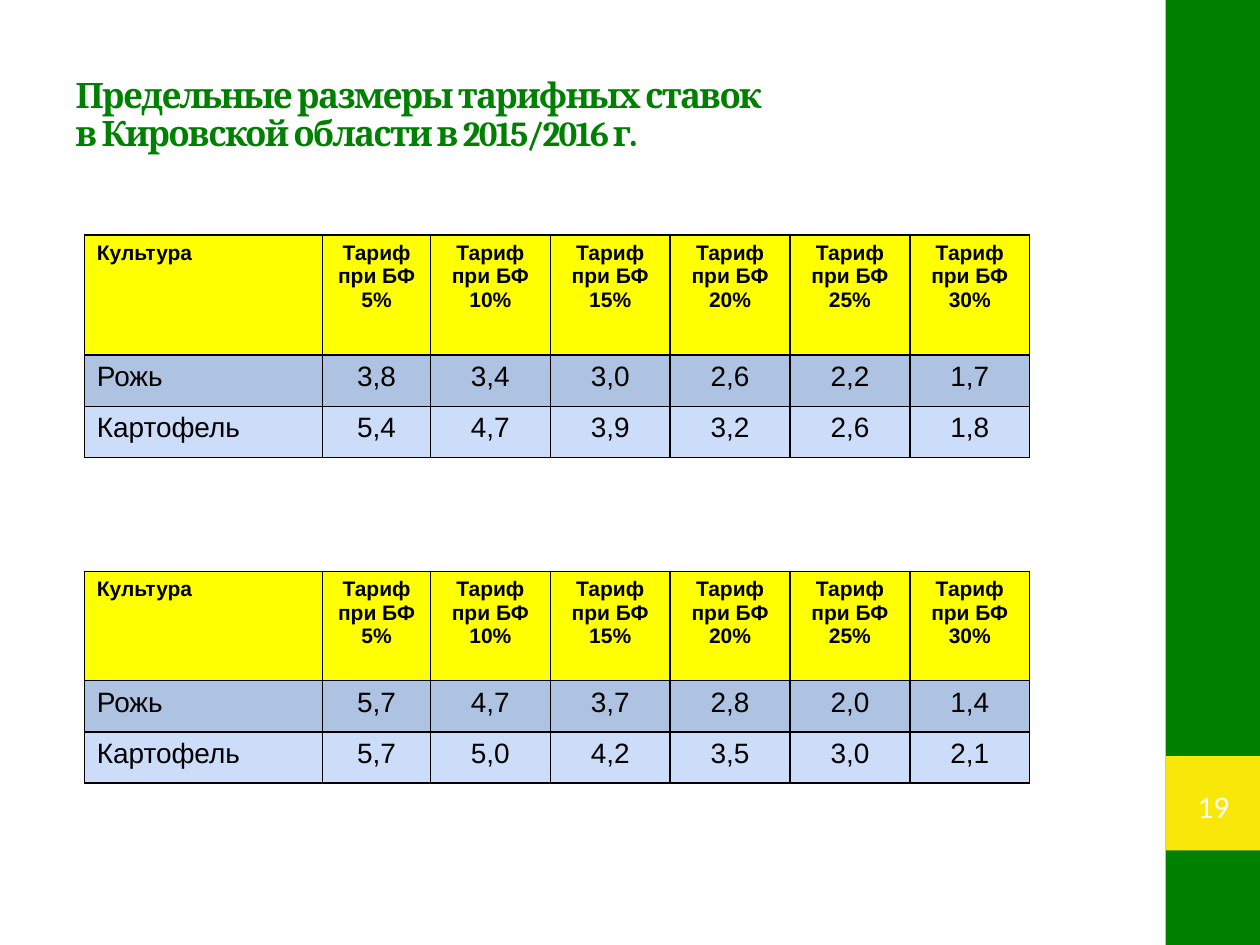
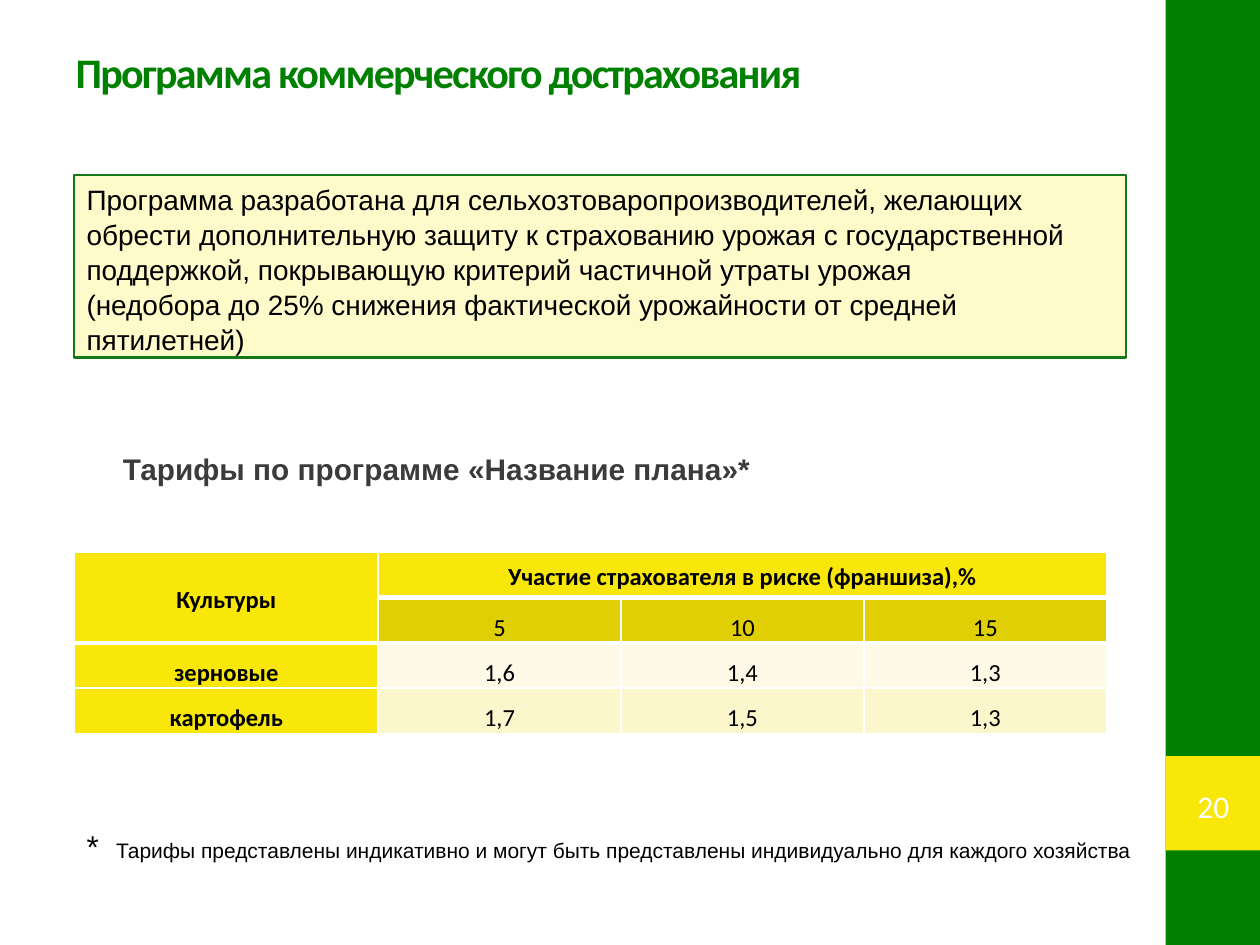
from lxml import etree
from pptx import Presentation
from pptx.dml.color import RGBColor
from pptx.enum import shapes, text
from pptx.oxml import ns
from pptx.util import Pt

COLORS = {
    "green": "008000", "yellow": "F8E708", "white": "FFFFFF", "black": "000000",
    "bright": "FFFF00", "steel": "ADC3E1", "sky": "CCDDF9",
    "gold": "DFCF04", "ivory": "FEFAE7", "cream": "FCF6CC",
    "callout": "FEFAC9", "outline": "177719", "gray": "3B3B3B",
}
CENTER = {"alignment": text.PP_ALIGN.CENTER}
LEFT = {"alignment": text.PP_ALIGN.LEFT}
MIDDLE = text.MSO_ANCHOR.MIDDLE
NO_INSETS = dict.fromkeys(("margin_left", "margin_top", "margin_right", "margin_bottom"), 0)
BAND = (666, 0, 54, 540)
NUMBER_TILE = (666, 432, 54, 54)
TITLE_SIZE = (600, 90)

TARIFF_HEADER = ["Культура"] + [f"Тариф при БФ {share}%" for share in range(5, 31, 5)]
TARIFF_COLUMNS = [136.2, 61.6] + [68.5] * 5
TARIFFS = [
    {"box": (48.2, 134.2), "header_height": 68.8, "rows": [
        ["Рожь", "3,8", "3,4", "3,0", "2,6", "2,2", "1,7"],
        ["Картофель", "5,4", "4,7", "3,9", "3,2", "2,6", "1,8"]]},
    {"box": (48.2, 326.6), "header_height": 62.4, "rows": [
        ["Рожь", "5,7", "4,7", "3,7", "2,8", "2,0", "1,4"],
        ["Картофель", "5,7", "5,0", "4,2", "3,5", "3,0", "2,1"]]},
]
FRANCHISE = [
    ["Культуры", "Участие страхователя в риске (франшиза),%", "", ""],
    ["", "5", "10", "15"],
    ["зерновые", "1,6", "1,4", "1,3"],
    ["картофель", "1,7", "1,5", "1,3"],
]
FRANCHISE_FILLS = ["yellow", "gold", "ivory", "cream"]


def rgb(name):
    """Return the named palette colour."""
    return RGBColor.from_string(COLORS[name])


def assign(target, values):
    """Set each attribute of the target from a dict."""
    for name, value in values.items():
        setattr(target, name, value)


def place(shape, box):
    """Move a shape to a box given in points."""
    assign(shape, dict(zip(("left", "top", "width", "height"), map(Pt, box))))


def add_run(paragraph, content, name, size, color="black", bold=False):
    """Append a formatted run to a paragraph."""
    run = paragraph.add_run()
    run.text = content
    assign(run.font, {"name": name, "size": Pt(size), "bold": bold})
    run.font.color.rgb = rgb(color)


def write(frame, lines, paragraph_format, **font):
    """Fill a text frame with one paragraph per line."""
    for index, line in enumerate(lines):
        paragraph = frame.add_paragraph() if index else frame.paragraphs[0]
        assign(paragraph, paragraph_format)
        add_run(paragraph, line, **font)


def indent(paragraph, margin, first=0):
    """Set the left margin and first-line indent without a bullet."""
    properties = paragraph._p.get_or_add_pPr()
    properties.set("marL", str(Pt(margin)))
    properties.set("indent", str(Pt(first)))
    etree.SubElement(properties, ns.qn("a:buNone"))


def add_panel(slide, box, fill=None, line=None, kind=shapes.MSO_SHAPE.RECTANGLE):
    """Add a flat preset shape."""
    shape = slide.shapes.add_shape(kind, *map(Pt, box))
    shape.shadow.inherit = False
    if fill:
        shape.fill.solid()
        shape.fill.fore_color.rgb = rgb(fill)
    else:
        shape.fill.background()
    if line:
        shape.line.color.rgb = rgb(line)
        shape.line.width = Pt(1.5)
    else:
        shape.line.fill.background()
    return shape


def add_master_band(presentation, slide):
    """Put the side band and number tile on the slide master."""
    tree = presentation.slide_master.element.cSld.spTree
    for position, (box, fill) in enumerate([(BAND, "green"), (NUMBER_TILE, "yellow")], 2):
        tree.insert(position, add_panel(slide, box, fill).element)


def add_title(slide, top, lines, name, size):
    """Fill and place the title placeholder."""
    title = slide.shapes.title
    place(title, (36, top, *TITLE_SIZE))
    assign(title.text_frame, {"vertical_anchor": MIDDLE, "word_wrap": True,
                              "auto_size": text.MSO_AUTO_SIZE.NONE})
    write(title.text_frame, lines, {**LEFT, "line_spacing": 0.9},
          name=name, size=size, color="green", bold=True)
    for properties in title.element.iter(ns.qn("a:rPr")):
        properties.set("spc", "-100")


def add_number(slide, number):
    """Write the slide number over its tile."""
    left, top, _, _ = NUMBER_TILE
    shape = add_panel(slide, (left + 5.8, top + 13, 43.2, 31), kind=shapes.MSO_SHAPE.DOUBLE_BRACKET)
    assign(shape.text_frame, {**NO_INSETS, "vertical_anchor": MIDDLE})
    write(shape.text_frame, [str(number)], CENTER, name="Calibri", size=18, color="white")


def add_border(cell, color, widths):
    """Draw the left, right, top and bottom borders of a cell."""
    properties = cell._tc.get_or_add_tcPr()
    for side, width in zip("LRTB", widths):
        line = etree.SubElement(properties, ns.qn(f"a:ln{side}"), w=str(Pt(width)))
        fill = etree.SubElement(line, ns.qn("a:solidFill"))
        etree.SubElement(fill, ns.qn("a:srgbClr"), val=COLORS[color])


def add_grid(slide, corner, widths, heights, rows, style):
    """Add a table whose cells are formatted by a style function."""
    box = (*corner, sum(widths), sum(heights))
    table = slide.shapes.add_table(len(rows), len(widths), *map(Pt, box)).table
    assign(table, {"first_row": False, "horz_banding": False})
    for column, width in zip(table.columns, widths):
        column.width = Pt(width)
    for row, height in zip(table.rows, heights):
        row.height = Pt(height)
    for row_index, row in enumerate(rows):
        for column_index, content in enumerate(row):
            cell = table.cell(row_index, column_index)
            look = style(row_index, column_index)
            assign(cell, look["cell"])
            add_border(cell, look["line"], look["widths"])
            cell.fill.solid()
            cell.fill.fore_color.rgb = rgb(look["fill"])
            if content:
                write(cell.text_frame, [content], look["paragraph"], **look["font"])
    return table


def tariff_style(row, column):
    """Describe a cell of a regional tariff table."""
    return {
        "cell": {"vertical_anchor": text.MSO_ANCHOR.TOP},
        "line": "black", "widths": (1, 1, 1, 1),
        "fill": ("bright", "steel", "sky")[row],
        "paragraph": CENTER if column else LEFT,
        "font": {"name": "Arial", "size": 16 if row else 12, "bold": row == 0},
    }


def franchise_style(row, column):
    """Describe a cell of the franchise table."""
    heading = row == 0 or column == 0
    return {
        "cell": {**NO_INSETS, "margin_left": Pt(5), "margin_right": Pt(5),
                 "vertical_anchor": MIDDLE if row == 0 else text.MSO_ANCHOR.BOTTOM},
        "line": "white",
        "widths": (1, 1, 3 if row in (1, 2) else 1, 3 if row < 2 else 1),
        "fill": "yellow" if heading else FRANCHISE_FILLS[row],
        "paragraph": {**CENTER, "line_spacing": 1.15},
        "font": {"name": "Calibri", "size": 14, "bold": heading},
    }


def add_callout(slide, box):
    """Add the framed description of the programme."""
    frame = add_panel(slide, box, "callout", "outline").text_frame
    assign(frame, {"word_wrap": True, "vertical_anchor": text.MSO_ANCHOR.TOP})
    write(frame, [
        "Программа разработана для сельхозтоваропроизводителей, желающих обрести "
        "дополнительную защиту к страхованию урожая с государственной поддержкой, "
        "покрывающую критерий частичной утраты урожая",
        "(недобора до 25% снижения фактической урожайности от средней пятилетней)",
    ], {**LEFT, "line_spacing": 1.04}, name="Arial", size=16)


def add_subtitle(slide, box):
    """Use the body placeholder as the heading of the table."""
    body = slide.placeholders[1]
    place(body, box)
    assign(body.text_frame, {"vertical_anchor": MIDDLE, "auto_size": text.MSO_AUTO_SIZE.NONE})
    write(body.text_frame, ["Тарифы по программе «Название плана»*"], {"space_before": Pt(0)},
          name="Arial", size=17, color="gray", bold=True)
    indent(body.text_frame.paragraphs[0], 27)


def add_footnote(slide, box):
    """Add the footnote with a hanging asterisk."""
    frame = slide.shapes.add_textbox(*map(Pt, box)).text_frame
    frame.word_wrap = True
    paragraph = frame.paragraphs[0]
    indent(paragraph, 16.8, -16.8)
    add_run(paragraph, "*\t", "Arial", 18)
    add_run(paragraph, "Тарифы представлены индикативно и могут быть представлены "
            "индивидуально для каждого хозяйства", "Arial", 12)


def build_tariff_slide(slide):
    """Build the slide with two regional tariff tables."""
    add_title(slide, 21.6, ["Предельные размеры тарифных ставок",
                            "в Кировской области в 2015/2016 г."], "Cambria", 20)
    add_number(slide, 19)
    for tariff in TARIFFS:
        add_grid(slide, tariff["box"], TARIFF_COLUMNS, [tariff["header_height"], 29.2, 29.2],
                 [TARIFF_HEADER, *tariff["rows"]], tariff_style)


def build_programme_slide(slide):
    """Build the slide on the commercial programme."""
    add_title(slide, -2, ["Программа коммерческого дострахования"], "Calibri", 24)
    add_subtitle(slide, (36, 226.8, 600, 81.4))
    add_number(slide, 20)
    table = add_grid(slide, (42.6, 315.6), [173.5] + [138.8] * 3, [25.9] * 4,
                     FRANCHISE, franchise_style)
    table.cell(0, 0).merge(table.cell(1, 0))
    table.cell(0, 1).merge(table.cell(0, 3))
    add_callout(slide, (42.4, 100, 601, 104.4))
    add_footnote(slide, (42.4, 468.8, 617.8, 43))


def main():
    """Create and save the presentation."""
    presentation = Presentation()
    assign(presentation, {"slide_width": Pt(720), "slide_height": Pt(540)})
    layouts = presentation.slide_layouts
    tariff_slide = presentation.slides.add_slide(layouts.get_by_name("Title Only"))
    add_master_band(presentation, tariff_slide)
    build_tariff_slide(tariff_slide)
    build_programme_slide(presentation.slides.add_slide(layouts.get_by_name("Title and Content")))
    presentation.save("out.pptx")


if __name__ == "__main__":
    main()
